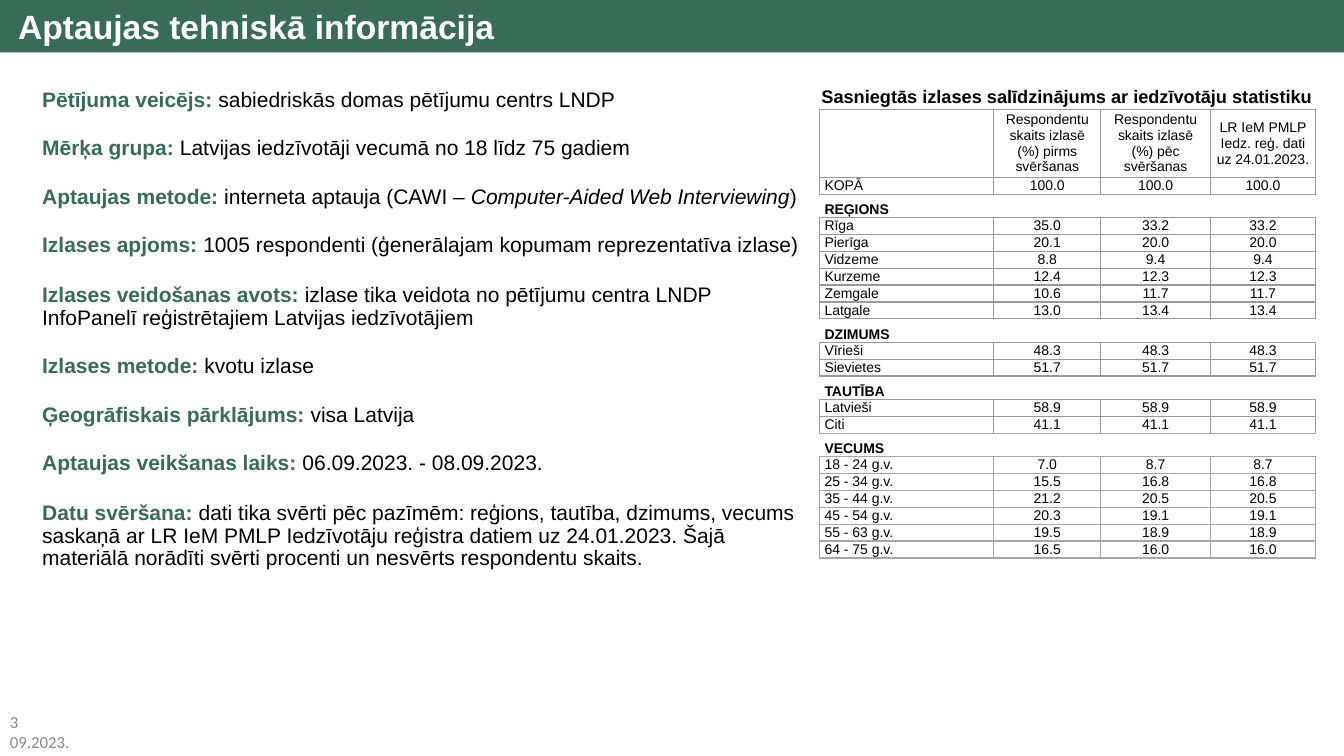
from dataclasses import dataclass

from lxml.etree import SubElement
from pptx import Presentation
from pptx.dml.color import RGBColor
from pptx.enum.shapes import MSO_SHAPE
from pptx.enum.text import MSO_ANCHOR, PP_ALIGN
from pptx.oxml.ns import qn
from pptx.util import Inches, Pt

COLORS = {
    "green": "386C57",
    "white": "FFFFFF",
    "black": "000000",
    "footer": "898989",
    "border": "999999",
    "age_border": "A6A6A6",
}
GRID_COLUMNS, GRID_ROWS = 160, 90
SLIDE_WIDTH, SLIDE_HEIGHT = Inches(GRID_COLUMNS / 12), Inches(GRID_ROWS / 12)
TABLE_COLUMNS = (20.76, 12.72, 13.08, 12.48)
HEADING_ROW, SECTION_ROW, DATA_ROW = 7.44, 2.8, 1.8
BORDER_TAGS = {"left": "a:lnL", "right": "a:lnR", "top": "a:lnT", "bottom": "a:lnB"}


@dataclass(frozen=True)
class Area:
    """Left, top, width and height in grid columns and rows."""
    left: float
    top: float
    width: float
    height: float

    def lengths(self):
        return (across(self.left), down(self.top), across(self.width), down(self.height))


@dataclass(frozen=True)
class Fact:
    label: str
    text: str
    italic: str = ""
    ending: str = ""
    line_spacing: float = 0.8


@dataclass(frozen=True)
class TableRow:
    texts: tuple[str, ...]
    height: float = DATA_ROW
    border: str = "border"
    is_section: bool = False


FACTS = (
    Fact("Pētījuma veicējs: ", "sabiedriskās domas pētījumu centrs LNDP"),
    Fact("Mērķa grupa: ", "Latvijas iedzīvotāji vecumā no 18 līdz 75 gadiem"),
    Fact("Aptaujas metode: ", "interneta aptauja (CAWI – ",
         "Computer-Aided Web Interviewing", ")"),
    Fact("Izlases apjoms: ", "1005 respondenti (ģenerālajam kopumam reprezentatīva izlase)"),
    Fact("Izlases veidošanas avots:",
         " izlase tika veidota no pētījumu centra LNDP InfoPanelī reģistrētajiem "
         "Latvijas iedzīvotājiem", line_spacing=0.9),
    Fact("Izlases metode: ", "kvotu izlase"),
    Fact("Ģeogrāfiskais pārklājums: ", "visa Latvija"),
    Fact("Aptaujas veikšanas laiks: ", "06.09.2023. - 08.09.2023."),
    Fact("Datu svēršana: ",
         "dati tika svērti pēc pazīmēm: reģions, tautība, dzimums, vecums saskaņā ar "
         "LR IeM PMLP Iedzīvotāju reģistra datiem uz 24.01.2023. Šajā materiālā "
         "norādīti svērti procenti un nesvērts respondentu skaits.", line_spacing=0.9),
)


def section(title: str, border: str = "border") -> TableRow:
    return TableRow((title, "", "", ""), SECTION_ROW, border, True)


def data(label: str, before: str, after: str, border: str = "border") -> TableRow:
    """The register share equals the share after weighting."""
    return TableRow((label, before, after, after), border=border)


TABLE_ROWS = (
    TableRow(("", "Respondentu skaits izlasē (%) pirms svēršanas",
              "Respondentu skaits izlasē (%) pēc svēršanas",
              "LR IeM PMLP Iedz. reģ. dati uz 24.01.2023."), HEADING_ROW),
    data("KOPĀ", "100.0", "100.0"),
    section("REĢIONS"),
    data("Rīga", "35.0", "33.2"),
    data("Pierīga", "20.1", "20.0"),
    data("Vidzeme", "8.8", "9.4"),
    data("Kurzeme", "12.4", "12.3"),
    data("Zemgale", "10.6", "11.7"),
    data("Latgale", "13.0", "13.4"),
    section("DZIMUMS"),
    data("Vīrieši", "48.3", "48.3"),
    data("Sievietes", "51.7", "51.7"),
    section("TAUTĪBA"),
    data("Latvieši", "58.9", "58.9"),
    data("Citi", "41.1", "41.1"),
    section("VECUMS", "age_border"),
    data("18 - 24 g.v.", "7.0", "8.7", "age_border"),
    data("25 - 34 g.v.", "15.5", "16.8", "age_border"),
    data("35 - 44 g.v.", "21.2", "20.5", "age_border"),
    data("45 - 54 g.v.", "20.3", "19.1", "age_border"),
    data("55 - 63 g.v.", "19.5", "18.9", "age_border"),
    data("64 - 75 g.v.", "16.5", "16.0", "age_border"),
)


def across(columns: float) -> int:
    return round(SLIDE_WIDTH * columns / GRID_COLUMNS)


def down(rows: float) -> int:
    return round(SLIDE_HEIGHT * rows / GRID_ROWS)


def format_run(run, size: float, color: str, bold: bool = False, font: str = "Arial") -> None:
    run.font.name, run.font.size, run.font.bold = font, Pt(size), bold
    run.font.color.rgb = RGBColor.from_string(COLORS[color])


def add_text(slide, area: Area, text: str, size: float, color: str,
             bold: bool = False, font: str = "Arial", align=PP_ALIGN.LEFT) -> None:
    text_frame = slide.shapes.add_textbox(*area.lengths()).text_frame
    text_frame.word_wrap = True
    text_frame.text = text
    for paragraph in text_frame.paragraphs:
        paragraph.alignment = align
        format_run(paragraph.runs[0], size, color, bold, font)


def add_title(slide, text: str) -> None:
    area = Area(0, 0, GRID_COLUMNS, 6.24)
    shape = slide.shapes.add_shape(MSO_SHAPE.RECTANGLE, *area.lengths())
    shape.shadow.inherit = False
    shape.fill.solid()
    shape.fill.fore_color.rgb = RGBColor.from_string(COLORS["green"])
    shape.line.fill.background()
    text_frame = shape.text_frame
    text_frame.text = text
    text_frame.margin_left = across(2.16)
    text_frame.vertical_anchor = MSO_ANCHOR.MIDDLE
    text_frame.paragraphs[0].alignment = PP_ALIGN.LEFT
    format_run(text_frame.paragraphs[0].runs[0], 24, "white", True)


def add_facts(slide, area: Area) -> None:
    text_frame = slide.shapes.add_textbox(*area.lengths()).text_frame
    text_frame.word_wrap = True
    for index, fact in enumerate(FACTS):
        paragraph = text_frame.add_paragraph() if index else text_frame.paragraphs[0]
        paragraph.text = fact.label
        paragraph.line_spacing = fact.line_spacing
        paragraph.space_before = Pt(20)
        format_run(paragraph.runs[0], 15, "green", True)
        for text in filter(None, (fact.text, fact.italic, fact.ending)):
            run = paragraph.add_run()
            run.text = text
            format_run(run, 15, "black")
            run.font.italic = text == fact.italic


def set_borders(cell, color: str, has_sides: bool) -> None:
    properties = cell._tc.get_or_add_tcPr()
    for side, tag in BORDER_TAGS.items():
        line = SubElement(properties, qn(tag), w=str(Pt(1)))
        if has_sides or side in ("top", "bottom"):
            fill = SubElement(line, qn("a:solidFill"))
            SubElement(fill, qn("a:srgbClr"), val=COLORS[color])
        else:
            SubElement(line, qn("a:noFill"))


def fill_cell(cell, text: str, row: TableRow, is_label: bool) -> None:
    cell.margin_left = cell.margin_right = across(0.6)
    cell.margin_top = cell.margin_bottom = 0
    cell.vertical_anchor = MSO_ANCHOR.BOTTOM if row.is_section else MSO_ANCHOR.MIDDLE
    set_borders(cell, row.border, not row.is_section)
    cell.fill.background()
    paragraph = cell.text_frame.paragraphs[0]
    paragraph.alignment = PP_ALIGN.LEFT if is_label else PP_ALIGN.CENTER
    if text:
        paragraph.text = text
        format_run(paragraph.runs[0], 10, "black", row.is_section)
    else:
        SubElement(paragraph._p, qn("a:endParaRPr"), sz="1000")


def add_sample_table(slide, left: float, top: float) -> None:
    area = Area(left, top, sum(TABLE_COLUMNS), sum(row.height for row in TABLE_ROWS))
    table = slide.shapes.add_table(len(TABLE_ROWS), len(TABLE_COLUMNS), *area.lengths()).table
    table.first_row = table.horz_banding = False
    for column, width in zip(table.columns, TABLE_COLUMNS):
        column.width = across(width)
    for table_row, row in zip(table.rows, TABLE_ROWS):
        table_row.height = down(row.height)
        for index, (cell, text) in enumerate(zip(table_row.cells, row.texts)):
            fill_cell(cell, text, row, index == 0)


def main() -> None:
    presentation = Presentation()
    presentation.slide_width, presentation.slide_height = SLIDE_WIDTH, SLIDE_HEIGHT
    slide = presentation.slides.add_slide(presentation.slide_layouts[6])
    add_text(slide, Area(0, 84.12, 17.76, 5.88), "3\n09.2023.", 12, "footer", font="Calibri")
    add_title(slide, "Aptaujas tehniskā informācija")
    add_facts(slide, Area(3.84, 10.32, 93.72, 65.28))
    add_sample_table(slide, 97.56, 13.08)
    add_text(slide, Area(94.08, 9.6, 65.76, 3.84),
             "Sasniegtās izlases salīdzinājums ar iedzīvotāju statistiku",
             13, "black", bold=True, align=PP_ALIGN.CENTER)
    presentation.save("out.pptx")


if __name__ == "__main__":
    main()
